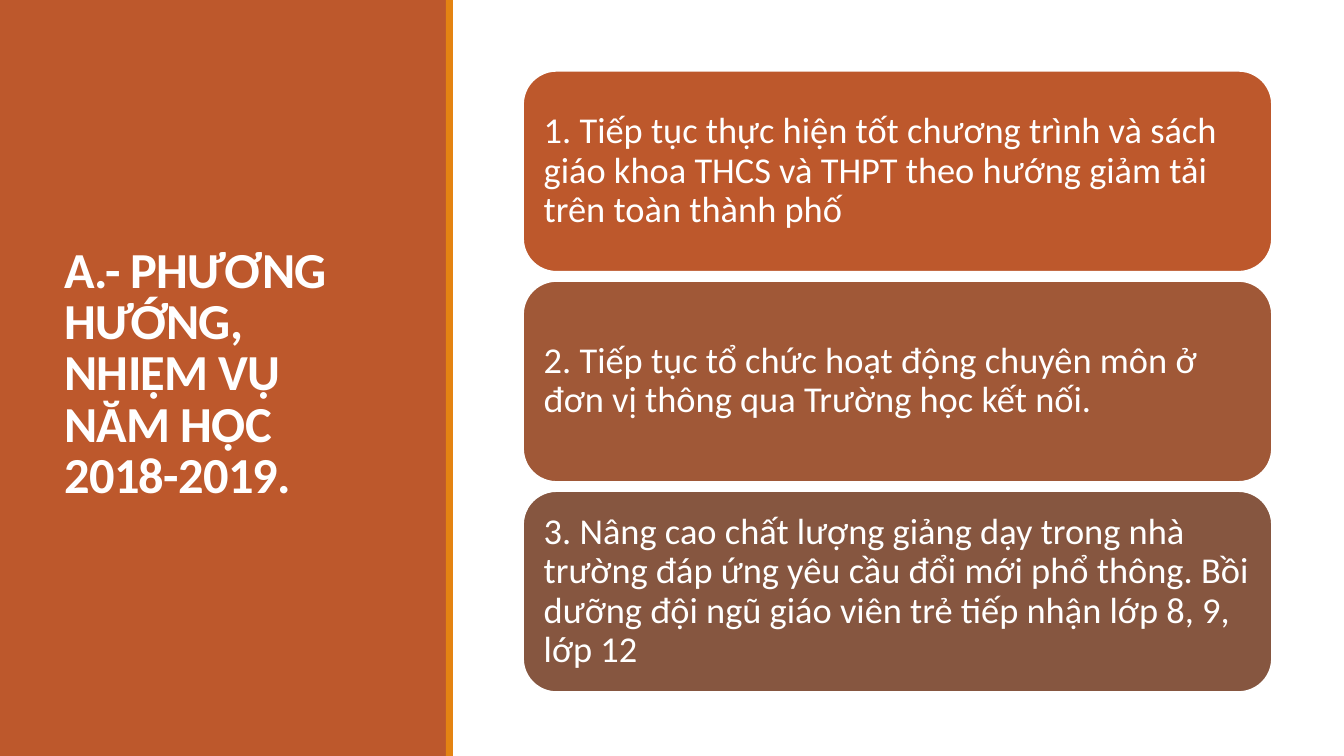
from pptx import Presentation
from pptx.dml.color import RGBColor
from pptx.enum.shapes import MSO_SHAPE
from pptx.enum.text import MSO_ANCHOR, PP_ALIGN
from pptx.util import Pt

RECT, ROUND = MSO_SHAPE.RECTANGLE, MSO_SHAPE.ROUNDED_RECTANGLE
MIDDLE, LEFT = MSO_ANCHOR.MIDDLE, PP_ALIGN.LEFT

TITLE = "A.- PHƯƠNG HƯỚNG, NHIỆM VỤ NĂM HỌC 2018-2019."
TASKS = [
    ("1. Tiếp tục thực hiện tốt chương trình và sách giáo khoa THCS và THPT "
     "theo hướng giảm tải trên toàn thành phố", "BD582C"),
    ("2. Tiếp tục tổ chức hoạt động chuyên môn ở đơn vị thông qua "
     "Trường học kết nối.", "A05837"),
    ("3. Nâng cao chất lượng giảng dạy trong nhà trường đáp ứng yêu cầu đổi mới "
     "phổ thông. Bồi dưỡng đội ngũ giáo viên trẻ tiếp nhận lớp 8, 9, lớp 12", "865640"),
]
PANELS = [(0, 319, "BD582C"), (318.5, 5, "E48312")]
SLIDE_W, SLIDE_H = 960, 540
CARD_X, CARD_Y, CARD_W, CARD_H, CARD_GAP = 373.6, 50.6, 535, 143.6, 6.5
CARD_INSET = 7.8


def color(value):
    return RGBColor.from_string(value)


def add_box(s, kind, x, y, w, h, fill):
    sp = s.shapes.add_shape(kind, Pt(x), Pt(y), Pt(w), Pt(h))
    sp.shadow.inherit = False
    sp.fill.solid()
    sp.fill.fore_color.rgb = color(fill)
    sp.line.fill.background()
    return sp


def write(sp, text, size, spacing, bold=False):
    tf = sp.text_frame
    tf.word_wrap = True
    tf.vertical_anchor = MIDDLE
    tf.text = text
    p = tf.paragraphs[0]
    p.alignment = LEFT
    p.line_spacing = spacing
    r = p.runs[0]
    r.font.name = "Calibri"
    r.font.size = Pt(size)
    r.font.bold = bold
    r.font.color.rgb = color("FFFFFF")
    return r


def main():
    prs = Presentation()
    prs.slide_width, prs.slide_height = Pt(SLIDE_W), Pt(SLIDE_H)
    s = prs.slides.add_slide(prs.slide_layouts[6])

    for x, w, fill in PANELS:
        add_box(s, RECT, x, 0, w, SLIDE_H, fill)

    title = s.shapes.add_textbox(Pt(39), Pt(41), Pt(242.6), Pt(454.3))
    r = write(title, TITLE, 36, 0.85, bold=True)
    r.font._element.set("spc", "-50")

    for i, (text, fill) in enumerate(TASKS):
        y = CARD_Y + i * (CARD_H + CARD_GAP)
        card = add_box(s, ROUND, CARD_X, y, CARD_W, CARD_H, fill)
        card.line.color.rgb = color("FFFFFF")
        card.line.width = Pt(1.25)
        tf = card.text_frame
        tf.margin_left = tf.margin_right = Pt(CARD_INSET)
        tf.margin_top = tf.margin_bottom = Pt(CARD_INSET)
        write(card, text, 26, 0.9)

    prs.save("out.pptx")


if __name__ == "__main__":
    main()
